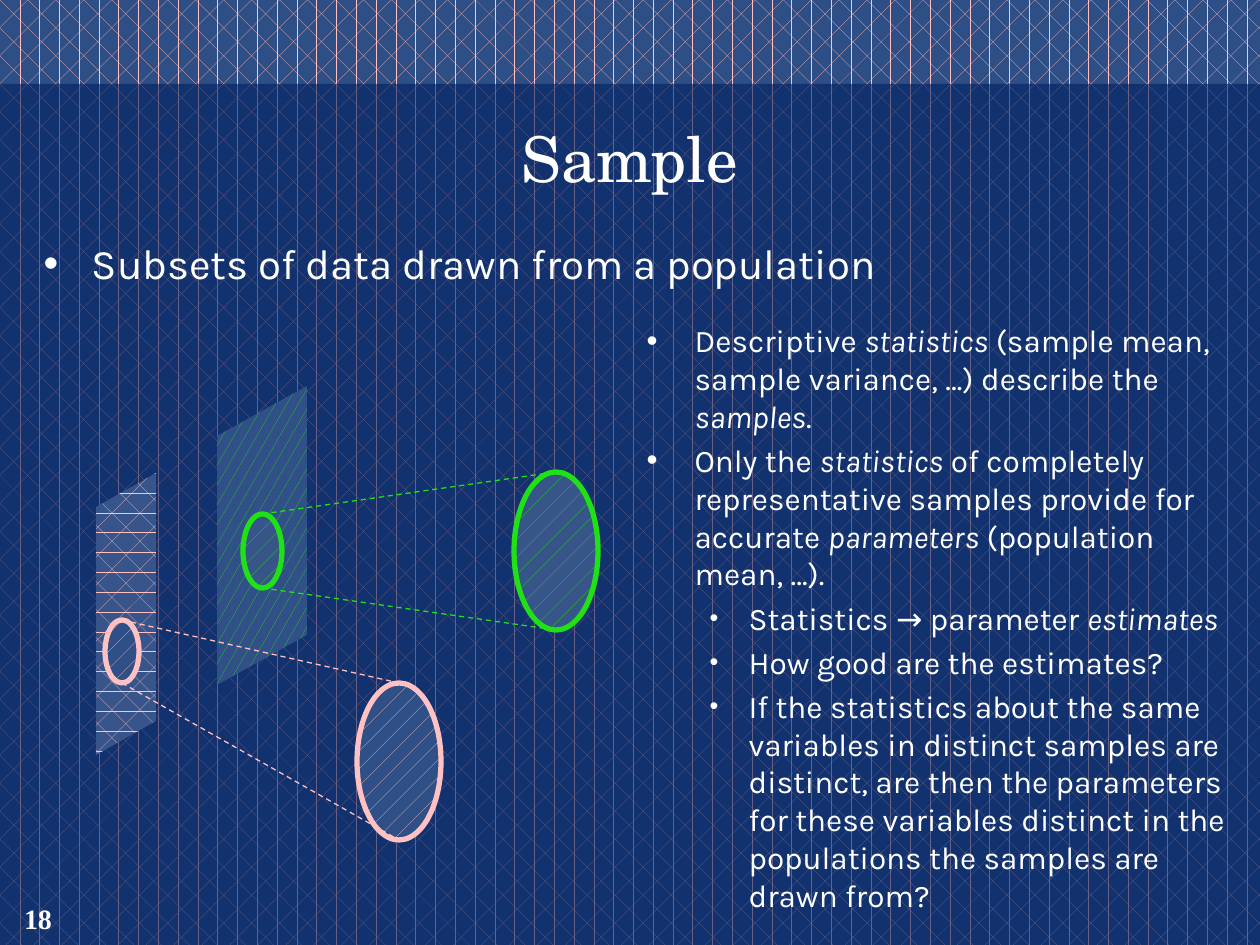
from lxml import etree
from pptx import Presentation
from pptx import util as u
from pptx.dml.color import RGBColor
from pptx.enum import dml, shapes, text
from pptx.oxml.ns import qn

SCALE = u.Inches(1) / 126
WHITE, NAVY, PINK, GREEN = "FFFFFF", "002060", "FFC1C1", "1FE115"
PATTERN = dml.MSO_PATTERN


def px(length):
    """Turn pixels into EMU."""
    return u.Emu(round(length * SCALE))


def rgb(value):
    """Turn a hex string into a colour."""
    return RGBColor.from_string(value)


def pattern_fill(fill, pattern, fore, back):
    """Fill with a two-colour pattern."""
    fill.patterned()
    fill.pattern = pattern
    fill.fore_color.rgb = rgb(fore)
    fill.back_color.rgb = rgb(back)


class SlideBuilder:
    """Holds the style and the current slide."""

    title_font = "TeX Gyre Schola"
    body_font = "Karla"
    number_font = "Times New Roman"
    indents = ((48, 48, 100), (102, 39, 80))

    def __init__(self, slide):
        self.slide = slide
        self.shapes = slide.shapes

    def place(self, shape, box):
        """Move and size a shape."""
        shape.left, shape.top, shape.width, shape.height = map(px, box)

    def style(self, font, name, size, bold=False):
        """Set the font of some text."""
        font.name, font.size, font.bold = name, u.Pt(size), bold
        font.color.rgb = rgb(WHITE)

    def veil(self, box, color, opacity):
        """Lay a translucent rectangle behind everything."""
        shape = self.shapes.add_shape(shapes.MSO_SHAPE.RECTANGLE, *map(px, box))
        shape.shadow.inherit = False
        shape.fill.solid()
        shape.fill.fore_color.rgb = rgb(color)
        shape.line.fill.background()
        color_element = shape.fill._xPr.find(".//" + qn("a:srgbClr"))
        etree.SubElement(color_element, qn("a:alpha"), val=str(opacity * 1000))
        self.shapes._spTree.insert(2, shape._element)

    def title(self, words, box):
        """Fill the title placeholder."""
        shape = self.shapes.title
        self.place(shape, box)
        frame = shape.text_frame
        frame.text = words
        frame.auto_size = text.MSO_AUTO_SIZE.NONE
        frame.vertical_anchor = text.MSO_ANCHOR.MIDDLE
        paragraph = frame.paragraphs[0]
        paragraph.alignment = text.PP_ALIGN.CENTER
        self.style(paragraph.runs[0].font, self.title_font, 36)

    def number(self, words, box):
        """Add the slide number."""
        frame = self.shapes.add_textbox(*map(px, box)).text_frame
        frame.word_wrap = True
        frame.text = words
        paragraph = frame.paragraphs[0]
        paragraph.alignment = text.PP_ALIGN.CENTER
        self.style(paragraph.runs[0].font, self.number_font, 16, True)

    def bullet(self, paragraph, level):
        """Give a paragraph its indent and bullet."""
        margin, hang, percent = self.indents[level]
        paragraph.level = level
        properties = paragraph._p.get_or_add_pPr()
        properties.set("marL", str(px(margin)))
        properties.set("indent", str(-px(hang)))
        color = etree.SubElement(properties, qn("a:buClr"))
        etree.SubElement(color, qn("a:srgbClr"), val=WHITE)
        etree.SubElement(properties, qn("a:buSzPct"), val=str(percent * 1000))
        etree.SubElement(properties, qn("a:buChar"), char="•")

    def bullets(self, index, box, size, items):
        """Fill a body placeholder with a list; asterisks enclose italics."""
        shape = self.slide.placeholders[index]
        self.place(shape, box)
        frame = shape.text_frame
        frame.auto_size = text.MSO_AUTO_SIZE.NONE
        frame.vertical_anchor = text.MSO_ANCHOR.TOP
        for order, (level, words) in enumerate(items):
            paragraph = frame.add_paragraph() if order else frame.paragraphs[0]
            self.bullet(paragraph, level)
            paragraph.space_before = u.Pt(size * 0.2 if order else 0)
            for part, piece in enumerate(words.split("*")):
                if piece:
                    run = paragraph.add_run()
                    run.text = piece
                    self.style(run.font, self.body_font, size)
                    run.font.italic = part % 2 == 1

    def panel(self, box, slant, pattern, fore, back):
        """Draw a patterned sheet whose right side is raised."""
        left, top, width, height = box
        right = left + width
        builder = self.shapes.build_freeform(left, top, scale=SCALE)
        builder.add_line_segments([(right, top - slant),
                                   (right, top - slant + height),
                                   (left, top + height)])
        shape = builder.convert_to_shape()
        shape.shadow.inherit = False
        pattern_fill(shape.fill, pattern, fore, back)
        shape.line.fill.background()

    def ellipse(self, box, color, back):
        """Draw a patterned ellipse with a thick outline."""
        shape = self.shapes.add_shape(shapes.MSO_SHAPE.OVAL, *map(px, box))
        shape.shadow.inherit = False
        pattern_fill(shape.fill, PATTERN.PERCENT_5, color, back)
        shape.line.color.rgb = rgb(color)
        shape.line.width = u.Pt(3)

    def dashed_line(self, start, end, color):
        """Draw a thin dashed line."""
        line = self.shapes.add_connector(
            shapes.MSO_CONNECTOR.STRAIGHT, *map(px, start + end))
        line.line.color.rgb = rgb(color)
        line.line.width = u.Pt(0.75)
        line.line.dash_style = dml.MSO_LINE.DASH
        etree.SubElement(line._element.spPr, qn("a:effectLst"))

    def magnify(self, small, large, color, back):
        """Draw two ellipses joined at their tops and bottoms."""
        for box in (large, small):
            self.ellipse(box, color, back)
        for side in (0, 1):
            start, end = ((left + width / 2, top + side * height)
                          for left, top, width, height in (small, large))
            self.dashed_line(start, end, color)


def main():
    """Build the slide."""
    presentation = Presentation()
    presentation.slide_width, presentation.slide_height = px(1260), px(945)
    slide = presentation.slides.add_slide(presentation.slide_layouts[3])
    pattern_fill(slide.background.fill, PATTERN.DIVOT, PINK, "2E4E86")

    builder = SlideBuilder(slide)
    builder.veil((0, 84, 1260, 861), NAVY, 60)
    builder.number("18", (0, 895, 76, 50))
    builder.title("Sample", (31, 105, 1197, 105))
    builder.bullets(1, (31, 231, 1197, 683), 24,
                    [(0, "Subsets of data drawn from a population")])
    builder.bullets(2, (634, 315, 615, 620), 18, [
        (0, "Descriptive *statistics* (sample mean, sample variance, …) "
            "describe the *samples*."),
        (0, "Only the *statistics* of completely representative samples "
            "provide for accurate *parameters* (population mean, …)."),
        (1, "Statistics → parameter *estimates*"),
        (1, "How good are the estimates?"),
        (1, "If the statistics about the same variables in distinct samples "
            "are distinct, are then the parameters for these variables "
            "distinct in the populations the samples are drawn from?"),
    ])
    builder.panel((96, 507, 60, 248), 34, PATTERN.DIVOT, PINK, "37558A")
    builder.panel((217, 436, 90, 249), 50, PATTERN.SMALL_CONFETTI, GREEN, "305087")
    builder.magnify((105, 620, 34, 63), (357, 683, 84, 157), PINK, "2F4F87")
    builder.magnify((243, 514, 39, 74), (514, 472, 84, 158), GREEN, "38558A")
    presentation.save("out.pptx")


if __name__ == "__main__":
    main()
